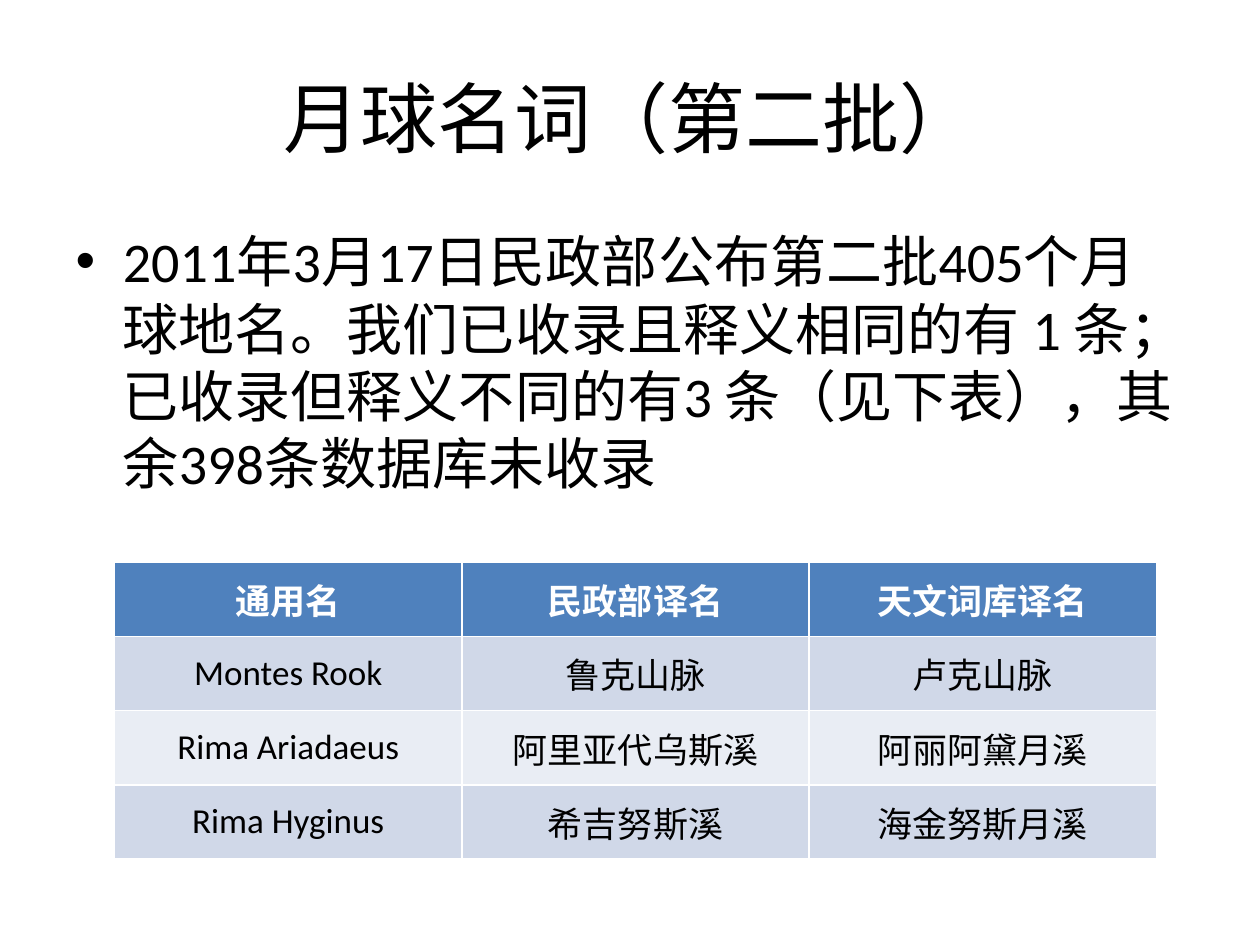
from dataclasses import dataclass

from pptx import Presentation
from pptx.dml.color import RGBColor
from pptx.enum.text import MSO_ANCHOR, PP_ALIGN
from pptx.util import Inches, Pt


@dataclass(frozen=True)
class Theme:
    font: str = "Calibri"
    title_size: int = 44
    body_size: int = 32
    table_size: int = 20
    text: str = "000000"
    header_text: str = "FFFFFF"
    header_fill: str = "4F81BD"
    row_fills: tuple = ("D0D8E8", "E9EDF4")


THEME = Theme()
TITLE = "月球名词（第二批）"
SUMMARY = (
    "2011年3月17日民政部公布第二批405个月球地名。"
    "我们已收录且释义相同的有 1 条；已收录但释义不同的有3 条（见下表），"
    "其余398条数据库未收录"
)
NAMES = [
    ("通用名", "民政部译名", "天文词库译名"),
    ("Montes Rook", "鲁克山脉", "卢克山脉"),
    ("Rima Ariadaeus", "阿里亚代乌斯溪", "阿丽阿黛月溪"),
    ("Rima Hyginus", "希吉努斯溪", "海金努斯月溪"),
]


def write_text(frame, text, size, color, bold=False, align=None):
    para = frame.paragraphs[0]
    para.text = text
    para.alignment = align
    para.font.name = THEME.font
    para.font.size = Pt(size)
    para.font.bold = bold
    para.font.color.rgb = RGBColor.from_string(color)


def fill_placeholder(box, place, text, size, align=None):
    box.left, box.top, box.width, box.height = map(Inches, place)
    write_text(box.text_frame, text, size, THEME.text, align=align)


def fill_cell(cell, text, is_header, fill):
    cell.fill.solid()
    cell.fill.fore_color.rgb = RGBColor.from_string(fill)
    cell.vertical_anchor = MSO_ANCHOR.MIDDLE
    color = THEME.header_text if is_header else THEME.text
    write_text(cell.text_frame, text, THEME.table_size, color, is_header, PP_ALIGN.CENTER)


def add_name_table(page, place, rows):
    table = page.shapes.add_table(len(rows), len(rows[0]), *map(Inches, place)).table
    for row_index, row in enumerate(rows):
        is_header = row_index == 0
        fill = THEME.header_fill if is_header else THEME.row_fills[(row_index - 1) % 2]
        for column_index, text in enumerate(row):
            fill_cell(table.cell(row_index, column_index), text, is_header, fill)


def main():
    deck = Presentation()
    deck.slide_width, deck.slide_height = Inches(10), Inches(7.5)
    page = deck.slides.add_slide(deck.slide_layouts[1])
    fill_placeholder(
        page.shapes.title, (0.5, 0.3, 9, 1.25), TITLE, THEME.title_size, PP_ALIGN.CENTER
    )
    fill_placeholder(page.placeholders[1], (0.5, 1.75, 9, 2.24), SUMMARY, THEME.body_size)
    add_name_table(page, (0.91, 4.46, 8.27, 2.36), NAMES)
    deck.save("out.pptx")


if __name__ == "__main__":
    main()
